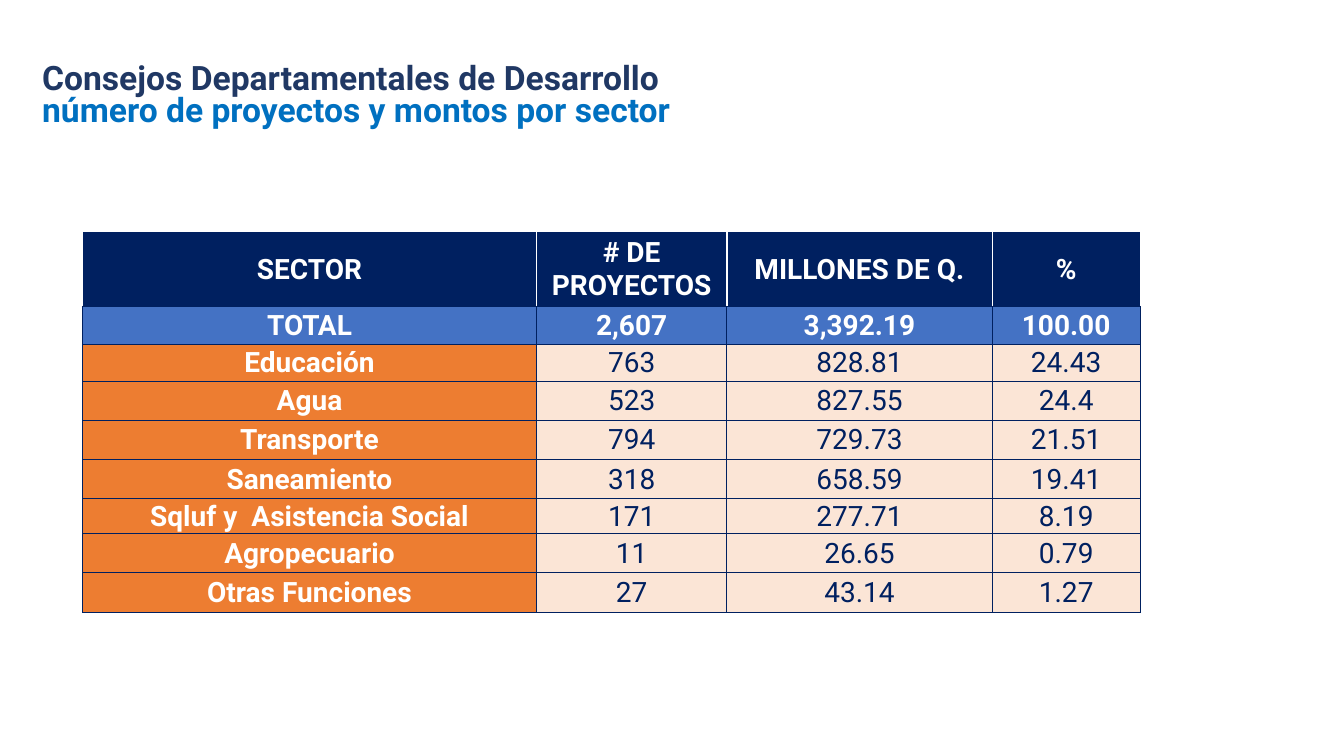
from lxml.etree import SubElement
from pptx import Presentation
from pptx.dml.color import RGBColor
from pptx.enum.text import MSO_ANCHOR, PP_ALIGN
from pptx.oxml.ns import qn
from pptx.util import Inches, Pt

# Content
TITLE = [
    ("Consejos Departamentales de Desarrollo", "203864"),
    ("número de proyectos y montos por sector", "0070C0"),
]
ROWS = [
    ("SECTOR", "# DE PROYECTOS", "MILLONES DE Q.", "%"),
    ("TOTAL", "2,607", "3,392.19", "100.00"),
    ("Educación", "763", "828.81", "24.43"),
    ("Agua", "523", "827.55", "24.4"),
    ("Transporte", "794", "729.73", "21.51"),
    ("Saneamiento", "318", "658.59", "19.41"),
    ("Sqluf y  Asistencia Social", "171", "277.71", "8.19"),
    ("Agropecuario", "11", "26.65", "0.79"),
    ("Otras Funciones", "27", "43.14", "1.27"),
]
COLUMN_WIDTHS = [4.5, 1.89, 2.63, 1.47]
ROW_HEIGHTS = [0.74, 0.38, 0.36, 0.39, 0.39, 0.39, 0.32, 0.39, 0.39]

# Style
FONT = "Roboto"
NAVY, WHITE, BLUE = "002060", "FFFFFF", "4472C4"
ORANGE, PEACH = "ED7D31", "FBE5D6"


def color(value):
    return RGBColor.from_string(value)


def write(para, text, *, size, ink, bold=True, align=PP_ALIGN.LEFT, spacing=1.0):
    para.alignment = align
    para.line_spacing = spacing
    span = para.add_run()
    span.text = text
    span.font.name = FONT
    span.font.size = Pt(size)
    span.font.bold = bold
    span.font.color.rgb = color(ink)


def set_borders(cell, is_header):
    properties = cell._tc.get_or_add_tcPr()
    for side in ("L", "R", "T", "B"):
        white = is_header and side != "B"
        line = SubElement(properties, qn(f"a:ln{side}"), w=str(Pt(1 if white else 0.75)))
        fill = SubElement(line, qn("a:solidFill"))
        SubElement(fill, qn("a:srgbClr"), val=WHITE if white else NAVY)


def cell_style(row, column):
    """Return fill, text colour and weight for a table position."""
    if row == 0:
        return NAVY, WHITE, True
    if row == 1:
        return BLUE, WHITE, True
    if column == 0:
        return ORANGE, WHITE, True
    return PEACH, NAVY, False


def add_title(page):
    box = page.shapes.add_textbox(Inches(0.32), Inches(0.59), Inches(9.87), Inches(1.03))
    frame = box.text_frame
    frame.word_wrap = True
    for index, (text, ink) in enumerate(TITLE):
        para = frame.add_paragraph() if index else frame.paragraphs[0]
        write(para, text, size=24, ink=ink, spacing=0.8)


def add_sector_table(page):
    table = page.shapes.add_table(
        len(ROWS), len(COLUMN_WIDTHS), Inches(0.82), Inches(2.3),
        Inches(sum(COLUMN_WIDTHS)), Inches(sum(ROW_HEIGHTS)),
    ).table
    table.horz_banding = False
    for column, width in zip(table.columns, COLUMN_WIDTHS):
        column.width = Inches(width)
    for row, height in zip(table.rows, ROW_HEIGHTS):
        row.height = Inches(height)

    for row, values in enumerate(ROWS):
        for column, text in enumerate(values):
            cell = table.cell(row, column)
            background, ink, bold = cell_style(row, column)
            set_borders(cell, row == 0)
            cell.fill.solid()
            cell.fill.fore_color.rgb = color(background)
            cell.margin_left = cell.margin_right = cell.margin_top = Inches(0.01)
            cell.margin_bottom = 0
            cell.vertical_anchor = MSO_ANCHOR.MIDDLE
            write(cell.text_frame.paragraphs[0], text, size=20, ink=ink,
                  bold=bold, align=PP_ALIGN.CENTER)


def main():
    deck = Presentation()
    deck.slide_width, deck.slide_height = Inches(13.33), Inches(7.5)
    page = deck.slides.add_slide(deck.slide_layouts[6])
    add_title(page)
    add_sector_table(page)
    deck.save("out.pptx")


if __name__ == "__main__":
    main()
